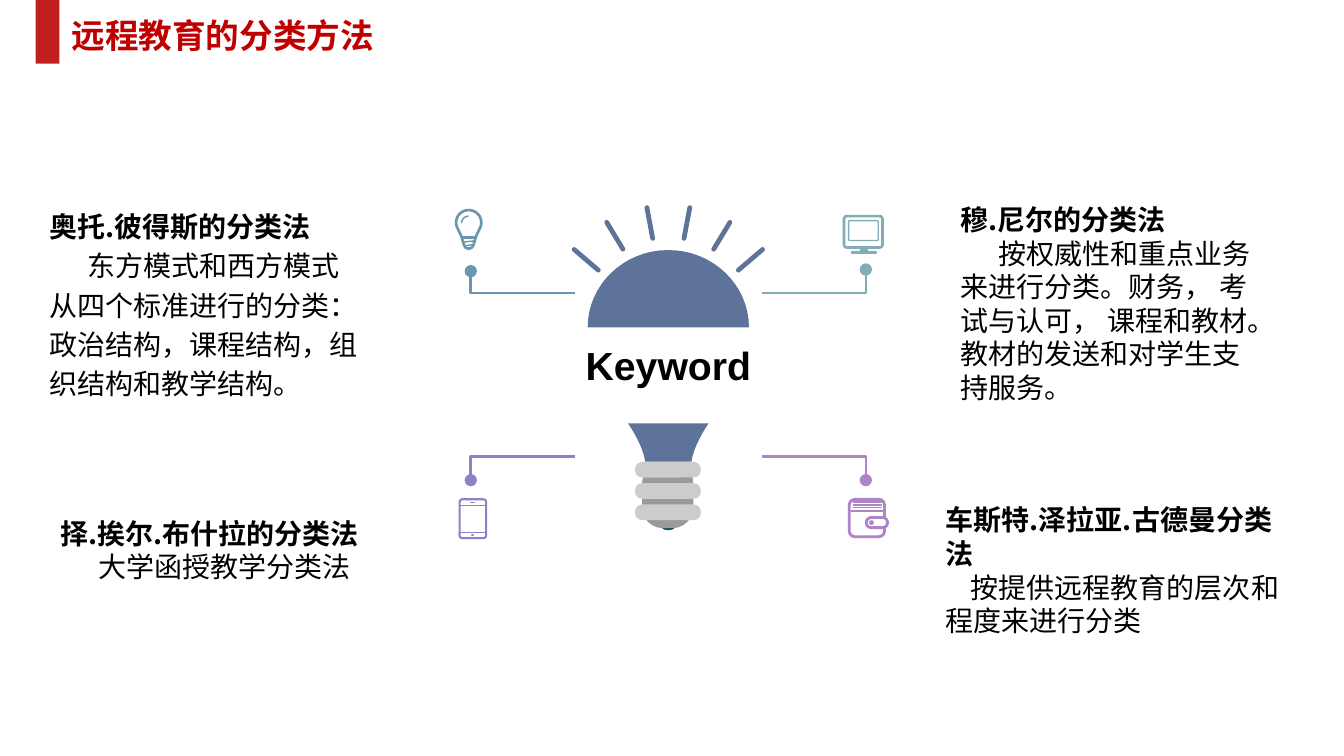
from dataclasses import dataclass

from lxml.etree import SubElement
from pptx import Presentation
from pptx.dml.color import RGBColor
from pptx.enum.shapes import MSO_CONNECTOR, MSO_SHAPE
from pptx.enum.text import MSO_ANCHOR, MSO_AUTO_SIZE, PP_ALIGN
from pptx.oxml.ns import qn
from pptx.util import Pt

Point = tuple[float, float]

CHINESE_FONT = "Noto Sans CJK SC"
RED, TITLE_RED, BLACK, WHITE = "C11E1E", "C00000", "000000", "FFFFFF"
NAVY, TEAL, GREY, SILVER = "5D739A", "1A5A62", "9B9A9A", "CDCCCC"
BLUE, AQUA, INDIGO, PURPLE = "6997AF", "84ACB6", "8784C7", "AD84C6"
BULB_CENTER = 477.4
ICON_CENTER = 334.8


@dataclass
class Box:
    left: float
    top: float
    width: float
    height: float
    fill: str | None = None
    line: str | None = None
    line_width: float = 1
    radius: float = 0
    kind: MSO_SHAPE = MSO_SHAPE.ROUNDED_RECTANGLE


@dataclass
class Line:
    start: Point
    end: Point
    color: str
    width: float = 1


@dataclass
class Outline:
    half: list[Point]
    center: float
    fill: str | None = None
    line: str | None = None


@dataclass
class Callout:
    dot: Point
    end: Point
    color: str


@dataclass
class Method:
    left: float
    top: float
    width: float
    height: float
    heading: str
    body: list[str]
    indent: float = 27
    spacing: float = 24


CALLOUTS = [
    Callout((336.3, 193.7), (410.4, 209.2), BLUE),
    Callout((618.5, 192.5), (544.3, 209.2), AQUA),
    Callout((336.3, 343), (410.4, 326.2), INDIGO),
    Callout((618.5, 343), (544.3, 326.2), PURPLE),
]

RAYS = [
    ((11.2, 170.3), (15.3, 148.3)),
    ((32.4, 178), (44, 158.8)),
    ((50, 193), (67.3, 178.2)),
]

BULB = [
    Box(458.6, 330.5, 36.7, 46.8, fill=GREY, radius=15),
    *[Box(453.6, 329.9 + 15.2 * ring, 47, 11.2, fill=SILVER, radius=5)
      for ring in range(3)],
    Outline([(473.1, 377.2), (473.8, 378.2), (475.4, 378.7), (477.4, 378.7)],
            BULB_CENTER, fill=TEAL),
    Outline([(419.8, 233.8), (419.8, 203.4), (445.6, 178.6), (477.4, 178.6)],
            BULB_CENTER, fill=NAVY),
    Outline([(448.6, 302.4), (455, 311.8), (460.1, 322.6), (460.8, 329.8)],
            BULB_CENTER, fill=NAVY),
    *[Line((BULB_CENTER + side * inner[0], inner[1]),
           (BULB_CENTER + side * outer[0], outer[1]), NAVY, 3.4)
      for inner, outer in RAYS for side in (-1, 1)],
]

WALLET = [
    Box(606.6, 356.7, 25.2, 26.7, line=PURPLE, line_width=2, radius=4),
    *[Line((609.6, y), (629.6, y), PURPLE) for y in (358.7, 360.7, 362.5)],
    Line((608, 365), (631, 365), PURPLE, 1.6),
    Box(618.8, 369.7, 15.2, 7.2, fill=WHITE, line=PURPLE, line_width=2, radius=3.4),
    Box(620.8, 371.6, 3.4, 3.4, fill=PURPLE, kind=MSO_SHAPE.OVAL),
]

PHONE = [
    Box(328.3, 356.6, 19, 27.8, line=INDIGO, line_width=1.5, radius=2),
    *[Line((329, y), (346.6, y), INDIGO) for y in (361.1, 380.5)],
    Line((336.2, 358.9), (338.8, 358.9), INDIGO),
    Line((337, 382.1), (338, 382.1), INDIGO),
]

MONITOR = [
    Box(602.9, 154.4, 27.5, 22.4, line=AQUA, line_width=1.9, radius=2),
    Box(606.2, 157.6, 21.2, 14.2, line=AQUA, radius=1),
    Box(614.2, 177.6, 5.8, 2, fill=AQUA, kind=MSO_SHAPE.RECTANGLE),
    Box(607.8, 179.3, 18.6, 2.1, fill=AQUA, radius=1),
]

LIGHT = [
    Outline([(334.8, 150.1), (330.1, 150.1), (325.8, 153.7), (325.8, 159.1),
             (325.8, 162.7), (329, 166.3), (330.1, 170.6),
             (331.6, 175.7), (331.9, 177.5), (334.8, 177.5)],
            ICON_CENTER, line=BLUE),
    Line((330.2, 169.6), (339.4, 169.6), BLUE, 1.7),
    Line((331.6, 172.8), (338, 172.2), BLUE),
    Line((332.2, 175.5), (337.4, 174.8), BLUE),
]
LIGHT_GLINT = [(329.8, 159.3), (329.8, 156.5), (332, 154.4), (334.8, 154.4)]

METHODS = [
    Method(28.1, 146.2, 242.6, 143.3, "奥托.彼得斯的分类法",
           ["东方模式和西方模式",
            "从四个标准进行的分类：政治结构，课程结构，组织结构和教学结构。"],
           spacing=28),
    Method(36, 365.2, 273.6, 56, "择.挨尔.布什拉的分类法", ["大学函授教学分类法"]),
    Method(679, 141.1, 231.1, 152.6, "穆.尼尔的分类法",
           ["按权威性和重点业务来进行分类。财务， 考试与认可， "
            "课程和教材。教材的发送和对学生支持服务。"]),
    Method(668.2, 355.7, 265.7, 80, "车斯特.泽拉亚.古德曼分类法",
           ["按提供远程教育的层次和程度来进行分类"], indent=18),
]


def rgb(color: str) -> RGBColor:
    return RGBColor.from_string(color)


def paint(shape, fill: str | None, line: str | None = None, width: float = 1) -> None:
    shape.shadow.inherit = False
    if fill:
        shape.fill.solid()
        shape.fill.fore_color.rgb = rgb(fill)
    else:
        shape.fill.background()
    if line:
        shape.line.color.rgb = rgb(line)
        shape.line.width = Pt(width)
    else:
        shape.line.fill.background()


def draw_box(slide, box: Box) -> None:
    shape = slide.shapes.add_shape(
        box.kind, Pt(box.left), Pt(box.top), Pt(box.width), Pt(box.height))
    if box.kind == MSO_SHAPE.ROUNDED_RECTANGLE:
        shape.adjustments[0] = box.radius / min(box.width, box.height)
    paint(shape, box.fill, box.line, box.line_width)


def draw_line(slide, line: Line) -> None:
    connector = slide.shapes.add_connector(
        MSO_CONNECTOR.STRAIGHT, *[Pt(value) for value in line.start + line.end])
    connector.line.color.rgb = rgb(line.color)
    connector.line.width = Pt(line.width)
    connector.get_or_add_ln().set("cap", "rnd")
    SubElement(connector._element.spPr, qn("a:effectLst"))


def curve(controls: list[Point], steps: int = 16) -> list[Point]:
    points = [controls[0]]
    for first in range(0, len(controls) - 1, 3):
        segment = controls[first:first + 4]
        for step in range(1, steps + 1):
            t = step / steps
            weights = ((1 - t) ** 3, 3 * t * (1 - t) ** 2, 3 * t * t * (1 - t), t ** 3)
            points.append((sum(w * p[0] for w, p in zip(weights, segment)),
                           sum(w * p[1] for w, p in zip(weights, segment))))
    return points


def draw_path(slide, points: list[Point], close: bool, fill: str | None = None,
              line: str | None = None, width: float = 1) -> None:
    corners = [(Pt(x), Pt(y)) for x, y in points]
    builder = slide.shapes.build_freeform(*corners[0])
    builder.add_line_segments(corners[1:], close=close)
    paint(builder.convert_to_shape(), fill, line, width)


def draw_outline(slide, outline: Outline) -> None:
    half = curve(outline.half)
    mirrored = [(2 * outline.center - x, y) for x, y in reversed(half)]
    draw_path(slide, half + mirrored, True, outline.fill, outline.line, 1.9)


def draw_callout(slide, callout: Callout) -> None:
    (x, y), end = callout.dot, callout.end
    draw_path(slide, [(x, y), (x, end[1]), end], False, line=callout.color, width=1.9)
    draw_box(slide, Box(x - 4.4, y - 4.4, 8.8, 8.8, callout.color, kind=MSO_SHAPE.OVAL))


def write(paragraph, text: str, *, size: float = 20, font: str = CHINESE_FONT,
          color: str = BLACK, bold: bool = False, align: PP_ALIGN = PP_ALIGN.LEFT,
          spacing=Pt(24), indent: float = 0) -> None:
    paragraph.alignment = align
    paragraph.line_spacing = spacing
    if indent:
        paragraph._p.get_or_add_pPr().set("indent", str(Pt(indent)))
    run = paragraph.add_run()
    run.text = text
    run.font.size, run.font.bold = Pt(size), bold
    run.font.color.rgb = rgb(color)
    run.font.name = font
    SubElement(run._r.get_or_add_rPr(), qn("a:ea")).set("typeface", font)


def draw_method(slide, method: Method) -> None:
    frame = slide.shapes.add_textbox(
        Pt(method.left), Pt(method.top), Pt(method.width), Pt(method.height)).text_frame
    frame.word_wrap = True
    write(frame.paragraphs[0], method.heading, bold=True)
    for number, text in enumerate(method.body):
        write(frame.add_paragraph(), text, spacing=Pt(method.spacing),
              indent=0 if number else method.indent)


def draw_title(slide, text: str) -> None:
    title = slide.shapes.title
    title.left, title.top, title.width, title.height = Pt(43.9), Pt(7.2), Pt(312.5), Pt(36)
    frame = title.text_frame
    frame.vertical_anchor = MSO_ANCHOR.TOP
    frame.auto_size = MSO_AUTO_SIZE.NONE
    write(frame.paragraphs[0], text, size=24, color=TITLE_RED, bold=True, spacing=Pt(28.8))


def draw_keyword(slide, text: str) -> None:
    width = 140
    frame = slide.shapes.add_textbox(
        Pt(BULB_CENTER - width / 2), Pt(242.6), Pt(width), Pt(39.6)).text_frame
    frame.word_wrap = False
    frame.margin_left = frame.margin_right = 0
    frame.vertical_anchor = MSO_ANCHOR.MIDDLE
    write(frame.paragraphs[0], text, size=28, font="Arial", bold=True,
          align=PP_ALIGN.CENTER, spacing=0.9)


def main() -> None:
    presentation = Presentation()
    presentation.slide_width, presentation.slide_height = Pt(960), Pt(540)
    slide = presentation.slides.add_slide(presentation.slide_layouts[5])
    draw_box(slide, Box(25.5, 0, 17, 45.5, RED, kind=MSO_SHAPE.RECTANGLE))
    draw_title(slide, "远程教育的分类方法")
    for callout in CALLOUTS:
        draw_callout(slide, callout)
    painters = {Box: draw_box, Line: draw_line, Outline: draw_outline}
    for part in BULB + WALLET + PHONE + MONITOR + LIGHT:
        painters[type(part)](slide, part)
    draw_path(slide, curve(LIGHT_GLINT), False, line=BLUE)
    draw_keyword(slide, "Keyword")
    for method in METHODS:
        draw_method(slide, method)
    presentation.save("out.pptx")


if __name__ == "__main__":
    main()
